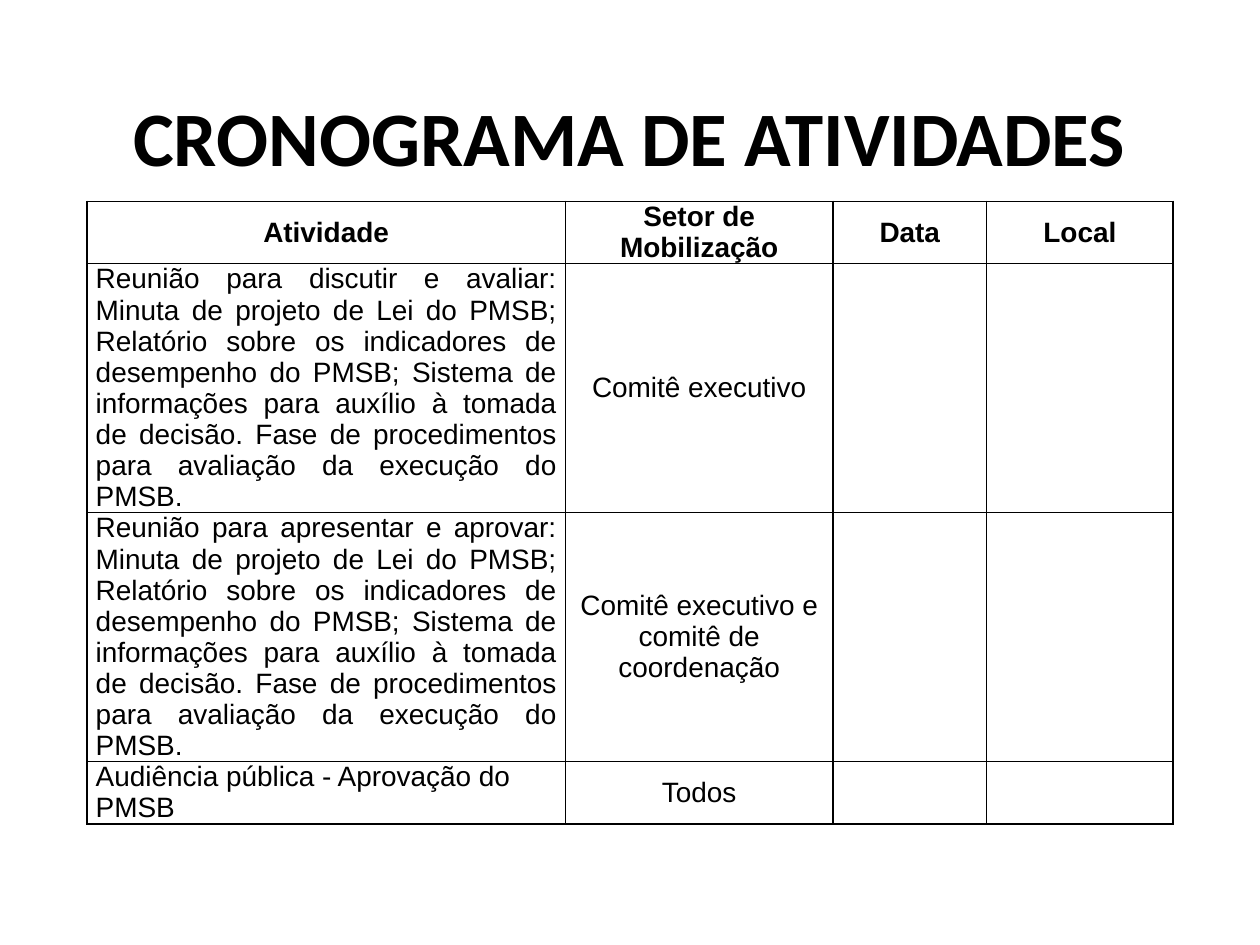
from dataclasses import dataclass

from lxml import etree
from pptx import Presentation
from pptx import util as u
from pptx.dml.color import RGBColor
from pptx.enum import text
from pptx.oxml.ns import qn


@dataclass(frozen=True)
class Theme:
    ink: str = "000000"
    title_font: str = "Calibri"
    body_font: str = "Arial"
    title_size: int = 44
    body_size: int = 16
    border_width: int = 1


@dataclass(frozen=True)
class Activity:
    description: str
    sector: str
    height: u.Length
    align: text.PP_ALIGN = text.PP_ALIGN.JUSTIFY


THEME = Theme()
LEFT, WIDTH = u.Cm(1.75), u.Cm(21.9)
HEADINGS = ("Atividade", "Setor de Mobilização", "Data", "Local")
COLUMN_WIDTHS = (u.Cm(9.65), u.Cm(5.39), u.Cm(3.1), u.Cm(3.76))
SHORT_ROW, TALL_ROW = u.Cm(1.25), u.Cm(5.02)
AGENDA = (
    "Minuta de projeto de Lei do PMSB; Relatório sobre os indicadores de "
    "desempenho do PMSB; Sistema de informações para auxílio à tomada de "
    "decisão. Fase de procedimentos para avaliação da execução do PMSB."
)
ACTIVITIES = (
    Activity(f"Reunião para discutir e avaliar: {AGENDA}",
             "Comitê executivo", TALL_ROW),
    Activity(f"Reunião para apresentar e aprovar: {AGENDA}",
             "Comitê executivo e comitê de coordenação", TALL_ROW),
    Activity("Audiência pública - Aprovação do PMSB",
             "Todos", SHORT_ROW, text.PP_ALIGN.LEFT),
)


def apply(target, values: dict) -> None:
    for name, value in values.items():
        setattr(target, name, value)


def write(para, words: str, font: str, size: int, bold: bool, align) -> None:
    para.alignment = align
    span = para.add_run()
    span.text = words
    apply(span.font, {"name": font, "size": u.Pt(size), "bold": bold})
    span.font.color.rgb = RGBColor.from_string(THEME.ink)


def add_borders(cell) -> None:
    properties = cell._tc.get_or_add_tcPr()
    for position, side in enumerate(("a:lnL", "a:lnR", "a:lnT", "a:lnB")):
        line = etree.Element(qn(side), w=str(u.Pt(THEME.border_width)))
        fill = etree.SubElement(line, qn("a:solidFill"))
        etree.SubElement(fill, qn("a:srgbClr"), val=THEME.ink)
        properties.insert(position, line)


def format_cell(cell) -> None:
    apply(cell, {
        "margin_left": u.Cm(0.18), "margin_right": u.Cm(0.18),
        "margin_top": 0, "margin_bottom": 0,
        "vertical_anchor": text.MSO_ANCHOR.MIDDLE,
    })
    cell.fill.background()
    add_borders(cell)


def write_cell(cell, words: str, bold: bool = False,
               align=text.PP_ALIGN.CENTER) -> None:
    write(cell.text_frame.paragraphs[0], words, THEME.body_font,
          THEME.body_size, bold, align)


def add_title(page, words: str) -> None:
    box = page.shapes.title
    apply(box, {"left": LEFT, "top": u.Cm(1.02),
                "width": WIDTH, "height": u.Cm(3.68)})
    apply(box.text_frame, {"vertical_anchor": text.MSO_ANCHOR.MIDDLE,
                           "word_wrap": True})
    para = box.text_frame.paragraphs[0]
    para.line_spacing = 0.9
    write(para, words, THEME.title_font, THEME.title_size, True,
          text.PP_ALIGN.CENTER)


def add_schedule(page) -> None:
    heights = (SHORT_ROW, *(activity.height for activity in ACTIVITIES))
    table = page.shapes.add_table(
        len(heights), len(HEADINGS), LEFT, u.Cm(4.06), WIDTH, sum(heights)
    ).table
    apply(table, {"first_row": False, "horz_banding": False})
    for column, width in zip(table.columns, COLUMN_WIDTHS):
        column.width = width
    for row, height in zip(table.rows, heights):
        row.height = height
    for cell in table.iter_cells():
        format_cell(cell)

    # Header row
    for index, heading in enumerate(HEADINGS):
        write_cell(table.cell(0, index), heading, bold=True)

    # Activities; date and place are still open
    for index, activity in enumerate(ACTIVITIES, start=1):
        write_cell(table.cell(index, 0), activity.description,
                   align=activity.align)
        write_cell(table.cell(index, 1), activity.sector)


def main() -> None:
    deck = Presentation()
    apply(deck, {"slide_width": u.Cm(25.4), "slide_height": u.Cm(19.05)})
    page = deck.slides.add_slide(deck.slide_layouts.get_by_name("Title Only"))
    add_title(page, "CRONOGRAMA DE ATIVIDADES")
    add_schedule(page)
    deck.save("out.pptx")


if __name__ == "__main__":
    main()
